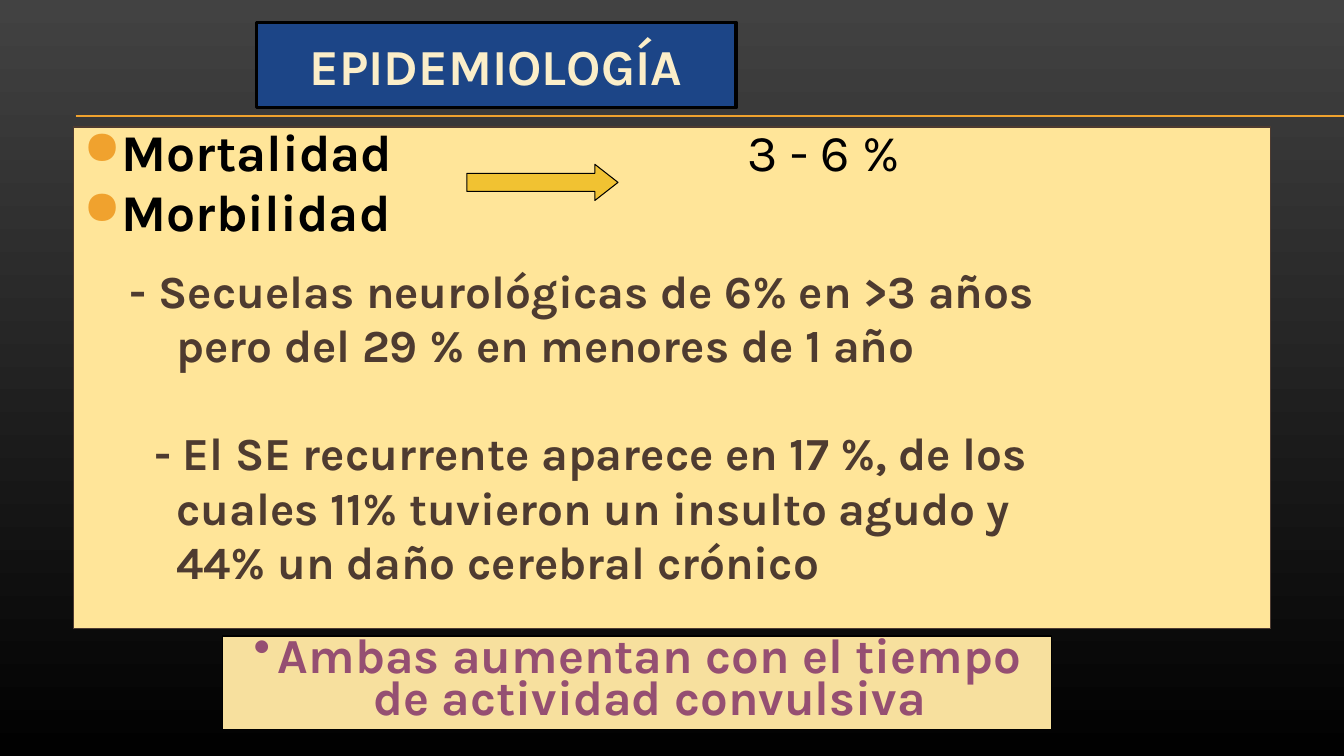
from lxml import etree
from pptx import Presentation
from pptx.dml.color import RGBColor
from pptx.enum.shapes import MSO_CONNECTOR, MSO_SHAPE
from pptx.enum.text import MSO_ANCHOR, PP_ALIGN
from pptx.oxml.ns import qn
from pptx.util import Inches, Pt

RECTANGLE, ARROW = MSO_SHAPE.RECTANGLE, MSO_SHAPE.RIGHT_ARROW
STRAIGHT = MSO_CONNECTOR.STRAIGHT
LEFT, CENTER = PP_ALIGN.LEFT, PP_ALIGN.CENTER
TOP, MIDDLE = MSO_ANCHOR.TOP, MSO_ANCHOR.MIDDLE
FONT = "Karla"
COLORS = {
    "top": "424242", "bottom": "010101", "orange": "F0A22E",
    "blue": "1C4587", "cream": "FBEEC9", "black": "000000",
    "yellow": "FFE599", "brown": "4E3B30", "gold": "F1C232",
    "sand": "F7E09E", "plum": "954F72",
}
# Text, left margin in inches, space before in points
DETAILS = [
    ("- Secuelas neurológicas de 6% en >3 años", 0.46, 23),
    ("pero del 29 % en menores de 1 año", 0.92, 7.2),
    ("- El SE recurrente aparece en 17 %, de los", 0.7, 46),
    ("cuales 11% tuvieron un insulto agudo y", 0.92, 7.2),
    ("44% un daño cerebral crónico", 0.92, 7.2),
]


def color(name):
    return RGBColor.from_string(COLORS[name])


def paint_background(page):
    fill = page.background.fill
    fill.gradient()
    fill.gradient_angle = 270
    for stop, name, position in zip(fill.gradient_stops, ("top", "bottom"), (0, 1)):
        stop.color.rgb = color(name)
        stop.position = position


def add_rule(page, top):
    rule = page.shapes.add_connector(
        STRAIGHT, Inches(0.75), Inches(top), Inches(13.33), Inches(top))
    rule.line.color.rgb = color("orange")
    rule.line.width = Pt(0.75)
    etree.SubElement(rule._element.spPr, qn("a:effectLst"))


def add_panel(page, kind, bounds, fill, line, width=0.75, anchor=TOP):
    box = page.shapes.add_shape(kind, *map(Inches, bounds))
    box.shadow.inherit = False
    box.fill.solid()
    box.fill.fore_color.rgb = color(fill)
    box.line.color.rgb = color(line)
    box.line.width = Pt(width)
    box.text_frame.word_wrap = True
    box.text_frame.vertical_anchor = anchor
    return box


def format_text(para, size, name, align=LEFT, spacing=1.0, before=0):
    para.alignment = align
    para.line_spacing = spacing
    para.space_before = Pt(before)
    for span in para.runs:
        span.font.name = FONT
        span.font.size = Pt(size)
        span.font.bold = True
        span.font.color.rgb = color(name)


def set_indent(para, margin, indent=0.0):
    properties = para._p.get_or_add_pPr()
    properties.set("marL", str(Inches(margin)))
    properties.set("indent", str(Inches(indent)))
    return properties


def add_bullet(para, symbol, name, margin, indent, percent=100):
    properties = set_indent(para, margin, indent)
    tint = etree.SubElement(properties, qn("a:buClr"))
    etree.SubElement(tint, qn("a:srgbClr"), val=COLORS[name])
    etree.SubElement(properties, qn("a:buSzPct"), val=str(percent * 1000))
    etree.SubElement(properties, qn("a:buChar"), char=symbol)


def add_tab(para, position):
    tabs = etree.SubElement(para._p.get_or_add_pPr(), qn("a:tabLst"))
    etree.SubElement(tabs, qn("a:tab"), pos=str(Inches(position)), algn="l")


def fill_body(frame):
    # Bulleted rates
    mortality, morbidity = frame.paragraphs[0], frame.add_paragraph()
    mortality.text = "Mortalidad"
    morbidity.text = "Morbilidad"
    for para, before in ((mortality, 0), (morbidity, 7.2)):
        add_bullet(para, "●", "orange", 0.38, -0.44, 92)
    add_tab(mortality, 6.59)
    rate = mortality.add_run()
    rate.text = "\t3 - 6 %"
    format_text(mortality, 36.8, "black", spacing=0.8)
    format_text(morbidity, 36.8, "black", spacing=0.8, before=7.2)
    rate.font.bold = False

    # Detail lines
    for text, margin, before in DETAILS:
        para = frame.add_paragraph()
        para.text = text
        set_indent(para, margin)
        format_text(para, 32.8, "brown", spacing=0.8, before=before)
    frame.paragraphs[2].runs[0].font.size = Pt(32.8)


def main():
    deck = Presentation()
    deck.slide_width, deck.slide_height = Inches(13.33), Inches(7.5)
    page = deck.slides.add_slide(deck.slide_layouts[6])
    paint_background(page)
    for top in (1.15, 1.16):
        add_rule(page, top)

    # Title
    title = add_panel(page, RECTANGLE, (2.54, 0.22, 4.76, 0.85),
                      "blue", "black", 2.25, MIDDLE)
    title.text_frame.text = "EPIDEMIOLOGÍA"
    format_text(title.text_frame.paragraphs[0], 36, "cream", CENTER)

    # Body and arrow
    body = add_panel(page, RECTANGLE, (0.73, 1.26, 11.87, 4.98), "yellow", "brown")
    fill_body(body.text_frame)
    arrow = add_panel(page, ARROW, (4.63, 1.63, 1.5, 0.36), "gold", "black")
    arrow.adjustments[0], arrow.adjustments[1] = 0.5, 0.64

    # Conclusion
    closing = add_panel(page, RECTANGLE, (2.21, 6.31, 8.22, 0.93), "sand", "black")
    closing.text_frame.text = "Ambas aumentan con el tiempo de actividad convulsiva"
    para = closing.text_frame.paragraphs[0]
    add_bullet(para, "•", "plum", 0.25, -0.24)
    format_text(para, 35, "plum", CENTER, 0.7)

    deck.save("out.pptx")


if __name__ == "__main__":
    main()
